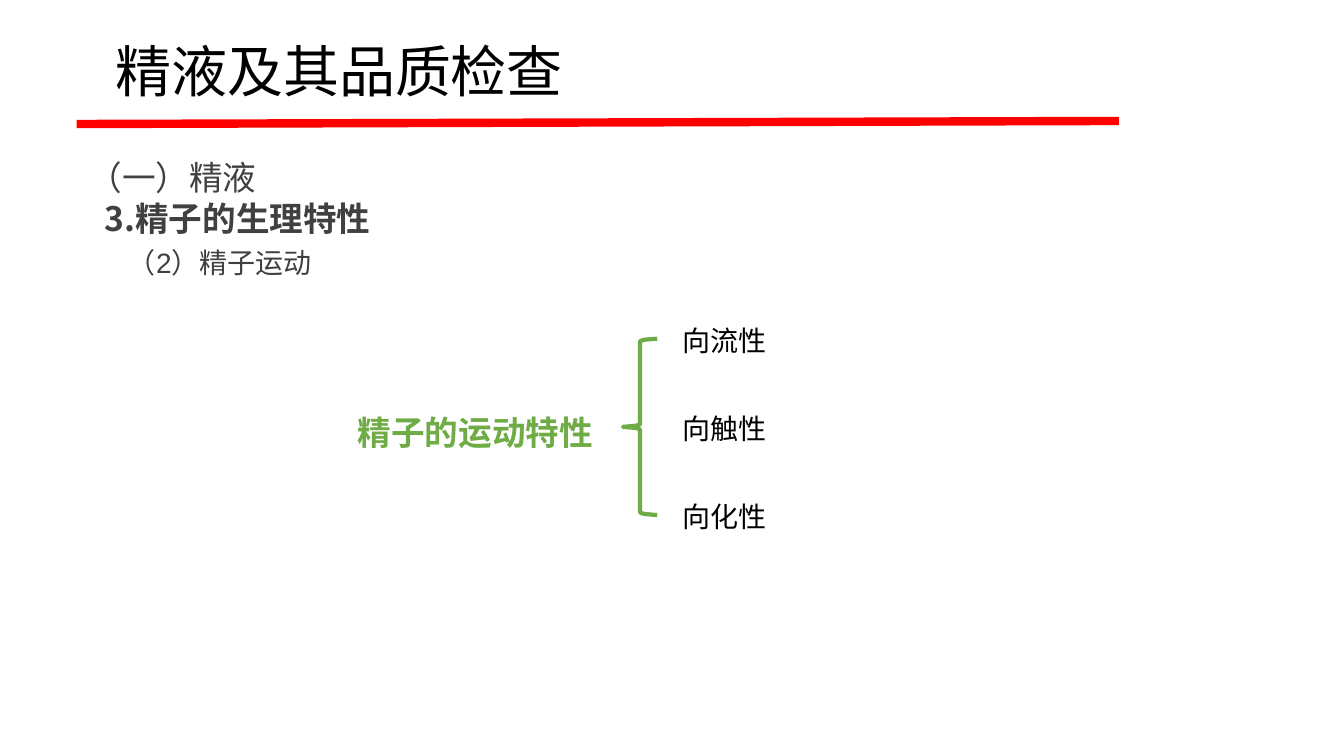
from lxml.etree import SubElement
from pptx import Presentation
from pptx.dml.color import RGBColor
from pptx.enum.text import MSO_ANCHOR, MSO_AUTO_SIZE, PP_ALIGN
from pptx.enum.shapes import MSO_CONNECTOR
from pptx.oxml.ns import qn
from pptx.util import Pt

BLACK = RGBColor(0x00, 0x00, 0x00)
GREY = RGBColor(0x40, 0x40, 0x40)
GREEN = RGBColor(0x6F, 0xAC, 0x46)
RED = RGBColor(0xFF, 0x00, 0x00)
WHITE = RGBColor(0xFF, 0xFF, 0xFF)
SANS = "Noto Sans CJK SC"


def place(shape, box):
    shape.left, shape.top, shape.width, shape.height = map(Pt, box)


def style(para, size, color, bold=False):
    """Set the font of a paragraph, for Latin and East Asian text alike."""
    font = para.font
    font.size, font.bold, font.name = Pt(size), bold, SANS
    font.color.rgb = color
    props = para._p.pPr.find(qn("a:defRPr"))
    SubElement(props, qn("a:ea")).set("typeface", SANS)


def add_title(slide, box, text):
    title = slide.shapes.title
    place(title, box)
    frame = title.text_frame
    frame.auto_size = MSO_AUTO_SIZE.NONE
    frame.vertical_anchor = MSO_ANCHOR.MIDDLE
    frame.margin_left = Pt(16.2)
    frame.text = text
    para = frame.paragraphs[0]
    para.alignment = PP_ALIGN.LEFT
    para.line_spacing = 0.9
    style(para, 40, BLACK)


def add_rule(slide, start, end):
    rule = slide.shapes.add_connector(
        MSO_CONNECTOR.STRAIGHT, *map(Pt, start + end))
    rule.line.color.rgb = RED
    rule.line.width = Pt(6)
    SubElement(rule._element.spPr, qn("a:effectLst"))


def add_heads(slide, box, heads):
    """Fill the body with headings, each given as text, indent and bold."""
    body = slide.placeholders[1]
    place(body, box)
    frame = body.text_frame
    frame.auto_size = MSO_AUTO_SIZE.NONE
    frame.vertical_anchor = MSO_ANCHOR.TOP
    frame.margin_top = Pt(5.5)
    frame.text = "\n".join(text for text, _, _ in heads)
    for para, (_, indent, bold) in zip(frame.paragraphs, heads):
        props = para._p.get_or_add_pPr()
        props.set("marL", str(Pt(indent)))
        props.set("indent", "0")
        SubElement(props, qn("a:buNone"))
        para.alignment = PP_ALIGN.LEFT
        para.space_before = Pt(0)
        para.line_spacing = Pt(29.3)
        style(para, 24, GREY, bold)


def add_label(slide, box, parts, size, color, bold=False):
    """Add one line of text, with a run for each part, and return the runs."""
    label = slide.shapes.add_textbox(*map(Pt, box))
    frame = label.text_frame
    frame.word_wrap = True
    frame.vertical_anchor = MSO_ANCHOR.MIDDLE
    frame.margin_left = frame.margin_right = 0
    frame.margin_top = frame.margin_bottom = 0
    para = frame.paragraphs[0]
    style(para, size, color, bold)
    runs = []
    for part in parts:
        run = para.add_run()
        run.text = part
        runs.append(run)
    return runs


def add_brace(slide, box):
    left, top, width, height = box
    stem, mid = width / 2, height / 2
    upper = [(width, 0), (width * 0.8, 0.4), (width * 0.65, 0.7),
             (stem + 0.7, 1.4), (stem, 2.2), (stem, mid - 2.2),
             (stem - 0.7, mid - 1.4), (width * 0.35, mid - 0.7),
             (width * 0.18, mid - 0.4), (0, mid)]
    lower = [(x, height - y) for x, y in reversed(upper[:-1])]
    spots = [(Pt(left + x), Pt(top + y)) for x, y in upper + lower]
    pen = slide.shapes.build_freeform(*spots[0])
    pen.add_line_segments(spots[1:], close=False)
    brace = pen.convert_to_shape()
    brace.shadow.inherit = False
    brace.fill.background()
    brace.line.color.rgb = GREEN
    brace.line.width = Pt(3)


def add_tree(slide, box, root, leaves):
    """Draw a root label, a brace and a column of leaf labels."""
    left, top, width, height = box
    add_label(slide, (left, top + 63.4, 172, 31), [root], 24, GREEN, True)
    add_brace(slide, (left + 189.4, top + 12.2, 24.4, 126))
    step = (height - 26.6) / (len(leaves) - 1)
    for row, leaf in enumerate(leaves):
        spot = (left + width - 63, top + row * step, 63, 26.6)
        add_label(slide, spot, [leaf], 20, BLACK)


def main():
    deck = Presentation()
    deck.slide_width, deck.slide_height = Pt(960), Pt(540)
    slide = deck.slides.add_slide(deck.slide_layouts[1])
    slide.background.fill.solid()
    slide.background.fill.fore_color.rgb = WHITE

    add_heads(slide, (45.4, 105.8, 764.6, 64.6),
              [("（一）精液", 10.6, False), ("3.精子的生理特性", 22, True)])
    add_rule(slide, (54.7, 88.6), (799.2, 86.4))
    add_title(slide, (66.2, 0.7, 828, 104.4), "精液及其品质检查")
    mark, _ = add_label(slide, (91.4, 174.6, 242, 25.2),
                        ["（2）", "精子运动"], 20, GREY)
    mark.font.name = "Arial"
    add_tree(slide, (255.6, 229.7, 295, 152.6), "精子的运动特性",
             ["向流性", "向触性", "向化性"])
    deck.save("out.pptx")


if __name__ == "__main__":
    main()
